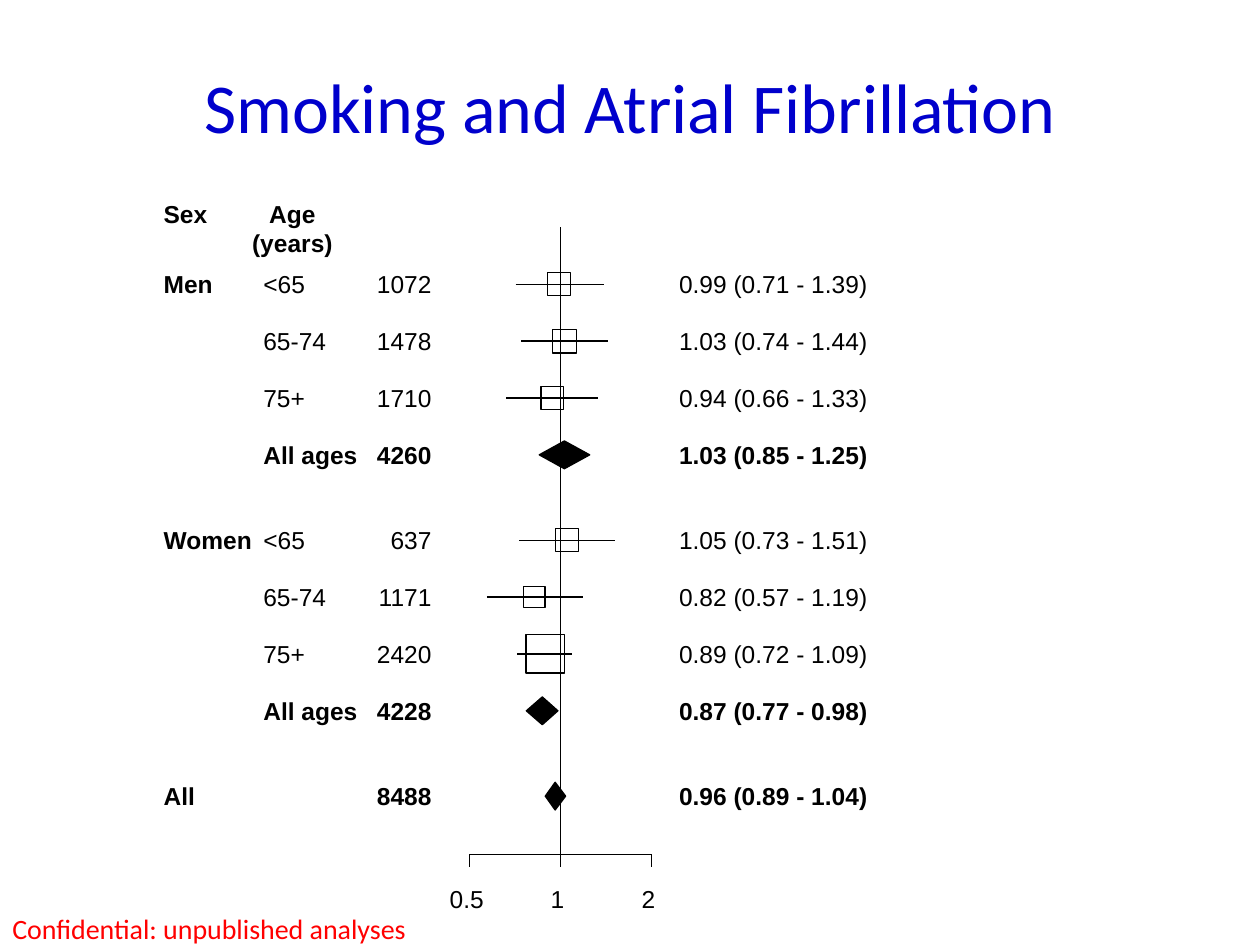
from math import log2

from lxml import etree
from pptx import Presentation
from pptx.dml.color import RGBColor
from pptx.enum.shapes import MSO_CONNECTOR, MSO_SHAPE
from pptx.enum.text import MSO_ANCHOR, PP_ALIGN
from pptx.oxml.ns import qn
from pptx.util import Cm, Pt

LEFT, CENTER, RIGHT = PP_ALIGN.LEFT, PP_ALIGN.CENTER, PP_ALIGN.RIGHT
MIDDLE = MSO_ANCHOR.MIDDLE
STRAIGHT = MSO_CONNECTOR.STRAIGHT
RECTANGLE = MSO_SHAPE.RECTANGLE

BLACK = RGBColor(0x00, 0x00, 0x00)
BLUE = RGBColor(0x00, 0x00, 0xCC)
RED = RGBColor(0xFF, 0x00, 0x00)

LINE_WIDTH = Pt(0.75)
TEXT_HEIGHT = 0.6
LAST_SLOT = 9

# slot, sex, age, count, ratio, low, high, square side (None for a subtotal)
ROWS = [
    (0, "Men", "<65", "1072", 0.99, 0.71, 1.39, 0.47),
    (1, "", "65-74", "1478", 1.03, 0.74, 1.44, 0.48),
    (2, "", "75+", "1710", 0.94, 0.66, 1.33, 0.46),
    (3, "", "All ages", "4260", 1.03, 0.85, 1.25, None),
    (4.5, "Women", "<65", "637", 1.05, 0.73, 1.51, 0.46),
    (5.5, "", "65-74", "1171", 0.82, 0.57, 1.19, 0.43),
    (6.5, "", "75+", "2420", 0.89, 0.72, 1.09, 0.77),
    (7.5, "", "All ages", "4228", 0.87, 0.77, 0.98, None),
    (9, "All", "", "8488", 0.96, 0.89, 1.04, None),
]


def add_text(s, text, left, top, width, height=TEXT_HEIGHT, bold=False, align=LEFT):
    tf = s.shapes.add_textbox(Cm(left), Cm(top), Cm(width), Cm(height)).text_frame
    tf.word_wrap = True
    tf.margin_left = tf.margin_right = tf.margin_top = tf.margin_bottom = 0
    tf.text = text
    for p in tf.paragraphs:
        p.alignment = align
        p.font.name, p.font.size, p.font.bold = "Arial", Pt(14), bold
        p.font.color.rgb = BLACK


def add_line(s, x1, y1, x2, y2):
    line = s.shapes.add_connector(STRAIGHT, Cm(x1), Cm(y1), Cm(x2), Cm(y2))
    line.line.color.rgb = BLACK
    line.line.width = LINE_WIDTH
    etree.SubElement(line.element.spPr, qn("a:effectLst"))


def outline(sp):
    sp.shadow.inherit = False
    sp.line.color.rgb = BLACK
    sp.line.width = LINE_WIDTH


def add_square(s, x, y, side):
    sp = s.shapes.add_shape(RECTANGLE, Cm(x - side / 2), Cm(y - side / 2), Cm(side), Cm(side))
    sp.fill.background()
    outline(sp)


def add_diamond(s, low, x, high, y, half_height=0.28):
    builder = s.shapes.build_freeform(Cm(low), Cm(y))
    corners = [(x, y - half_height), (high, y), (x, y + half_height)]
    builder.add_line_segments([(Cm(cx), Cm(cy)) for cx, cy in corners], close=True)
    sp = builder.convert_to_shape()
    sp.fill.solid()
    sp.fill.fore_color.rgb = BLACK
    outline(sp)


def add_title(s, left, top, width, height):
    title = s.shapes.title
    title.left, title.top, title.width, title.height = Cm(left), Cm(top), Cm(width), Cm(height)
    tf = title.text_frame
    tf.text = "Smoking and Atrial Fibrillation"
    tf.vertical_anchor = MIDDLE
    p = tf.paragraphs[0]
    p.alignment = CENTER
    p.font.name, p.font.size = "Calibri", Pt(40)
    p.font.color.rgb = BLUE


def add_headings(s, left, top):
    add_text(s, "Sex", left, top, 1.2, bold=True)
    add_text(s, "Age\n(years)", left + 1.73, top, 1.73, 2 * TEXT_HEIGHT, True, CENTER)


def add_row_labels(s, left, top, height):
    for slot, sex, age, count, ratio, low, high, side in ROWS:
        y = top + slot * height / LAST_SLOT
        subtotal = side is None
        if sex:
            add_text(s, sex, left, y, 1.9, bold=True)
        if age:
            add_text(s, age, left + 2.01, y, 2, bold=subtotal)
        add_text(s, count, left + 4.24, y, 1.16, bold=subtotal, align=RIGHT)
        estimate = f"{ratio:.2f} ({low:.2f} - {high:.2f})"
        add_text(s, estimate, left + 10.39, y, 3.9, bold=subtotal)


def add_forest_plot(s, left, top, width, height, first_row, rows_height):
    def x_at(ratio):
        return left + width * (log2(ratio) + 1) / 2

    axis_y = top + height
    for slot, _, _, _, ratio, low, high, side in ROWS:
        y = first_row + slot * rows_height / LAST_SLOT
        if side is None:
            add_diamond(s, x_at(low), x_at(ratio), x_at(high), y)
        else:
            add_square(s, x_at(ratio), y, side)
            add_line(s, x_at(low), y, x_at(high), y)

    add_line(s, x_at(1), axis_y, x_at(1), top)
    add_line(s, left, axis_y, left + width, axis_y)
    for tick in (0.5, 1, 2):
        x = x_at(tick)
        add_line(s, x, axis_y, x, axis_y + 0.26)
        add_text(s, f"{tick}", x - 0.46, axis_y + 0.61, 0.8, align=CENTER)


def add_footer(s, left, top, width, height):
    tf = s.shapes.add_textbox(Cm(left), Cm(top), Cm(width), Cm(height)).text_frame
    tf.word_wrap = True
    tf.text = "Confidential: unpublished analyses"
    p = tf.paragraphs[0]
    p.font.name, p.font.size = "Calibri", Pt(16)
    p.font.color.rgb = RED


def main():
    prs = Presentation()
    prs.slide_width, prs.slide_height = Cm(25.4), Cm(19.05)
    s = prs.slides.add_slide(prs.slide_layouts[5])
    rows_top, rows_height = 5.43, 10.32
    add_title(s, 1.27, 0.53, 22.86, 3.18)
    add_headings(s, 3.3, 4.01)
    add_row_labels(s, 3.3, rows_top, rows_height)
    add_forest_plot(s, 9.47, 4.57, 3.66, 12.65, rows_top + TEXT_HEIGHT / 2, rows_height)
    add_footer(s, 0, 18.26, 8.97, 0.94)
    prs.save("out.pptx")


if __name__ == "__main__":
    main()
